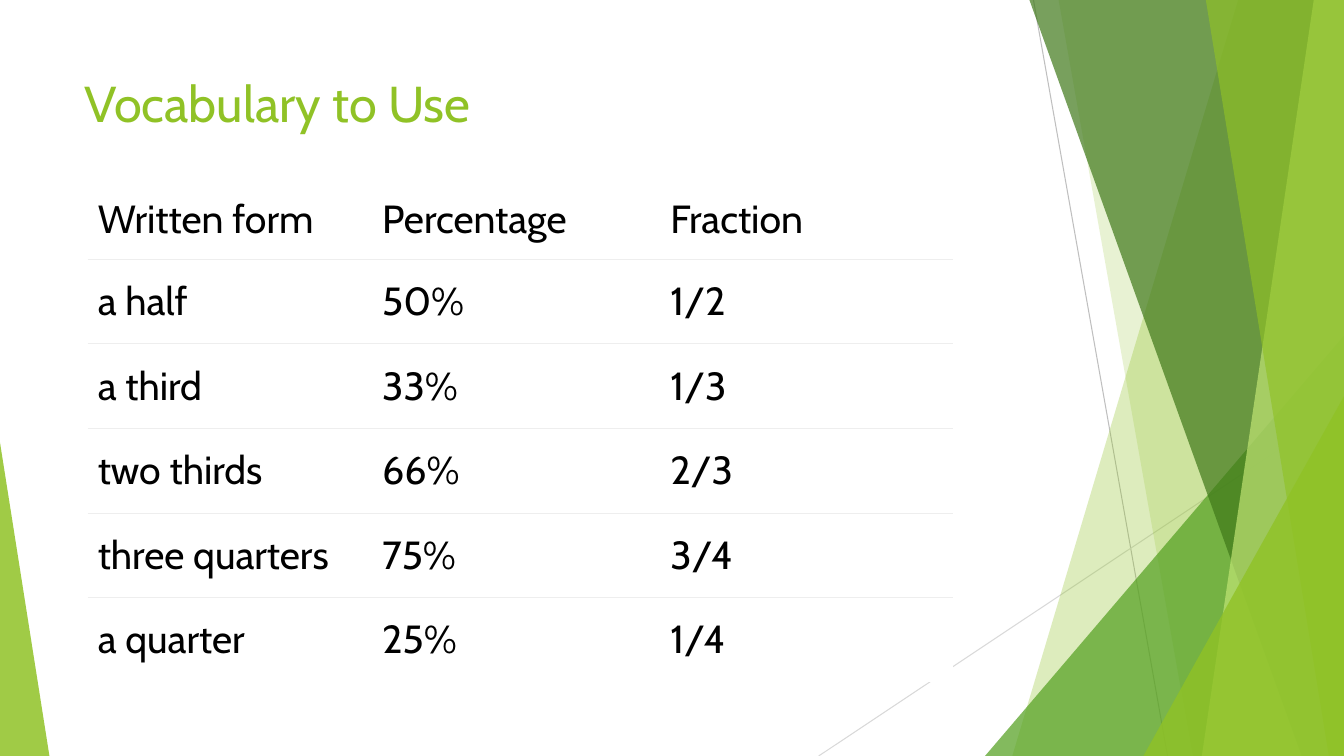
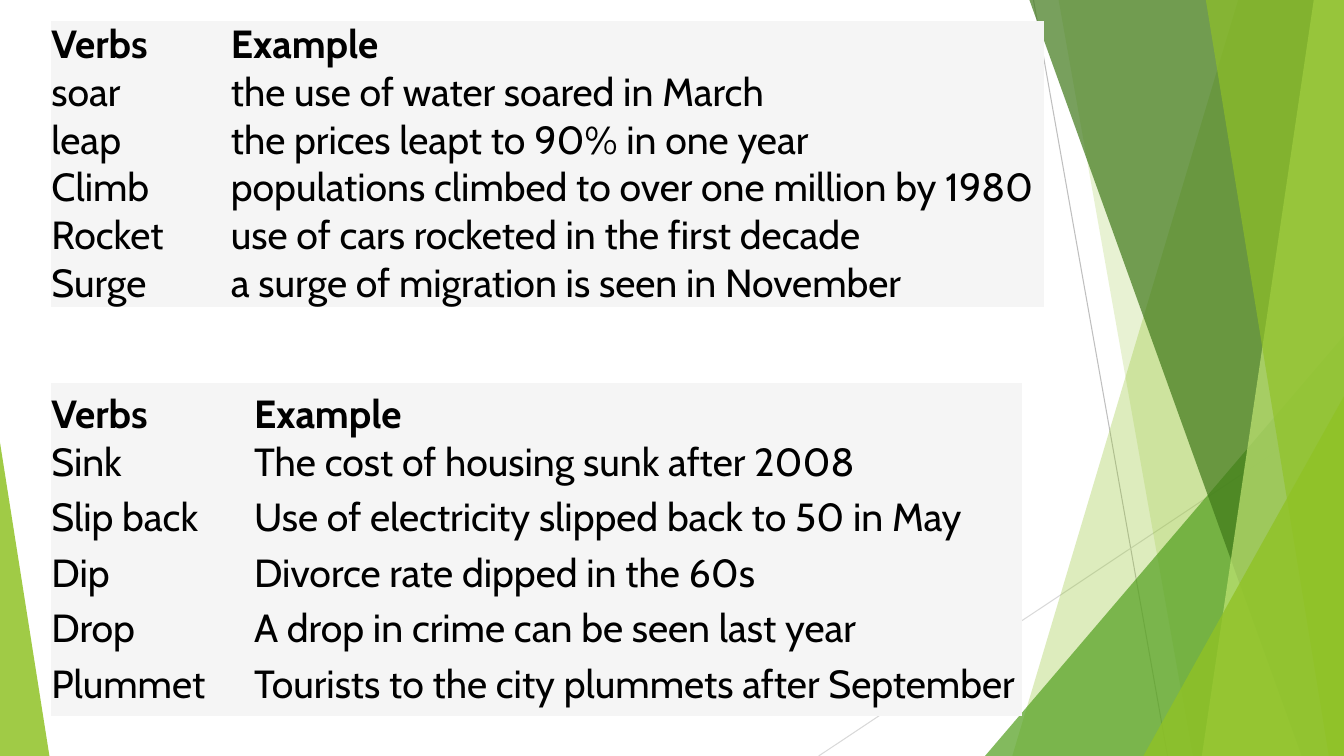
import lxml.etree
import pptx
import pptx.dml.color
import pptx.enum.shapes
import pptx.enum.text
import pptx.oxml.ns
import pptx.util

COLORS = {
    "lime": "90C226", "green": "54A021", "forest": "3F7819", "pale": "C0E474",
    "white": "FFFFFF", "mist": "F5F5F5", "rule": "EEEEEE", "text": "000000",
    "gray": "BFBFBF", "silver": "D9D9D9",
}
FONT = "Cabin"
WIDTH, HEIGHT = 13.33, 7.5
ANCHOR = pptx.enum.text.MSO_ANCHOR

RAYS = [((10.25, 0), (11.58, HEIGHT), "gray"), ((WIDTH, 4.03), (8.12, HEIGHT), "silver")]
FACETS = [
    ("band", 12.28, 10.04, "lime", 30),
    ("band", 10.5, 11.83, "lime", 20),
    ("corner", 3.56, 4.17, "green", 72),
    ("band", 10.21, 12.91, "forest", 70),
    ("band", 13.03, 11.92, "pale", 70),
    ("band", 11.96, 13.18, "lime", 65),
    ("corner", 1.99, 3.57, "lime", 80),
    ("left corner", 0.49, 3.11, "lime", 85),
]

TITLE = "Vocabulary to Use"
VOCABULARY = {
    "rows": [
        ("Written form", "Percentage", "Fraction"),
        ("a half", "50%", "1/2"),
        ("a third", "33%", "1/3"),
        ("two thirds", "66%", "2/3"),
        ("three quarters", "75%", "3/4"),
        ("a quarter", "25%", "1/4"),
    ],
    "at": (0.87, 1.78), "columns": (2.86, 2.86, 2.86), "heights": (0.79, 0.84),
    "fill": "white", "ruled": True, "bold_header": False,
    "anchors": (ANCHOR.MIDDLE, ANCHOR.MIDDLE), "lead": 0.1, "inset": 0.06,
}
VERB_STYLE = {"fill": "mist", "ruled": False, "bold_header": True, "lead": 0, "inset": 0}
RISING = {
    "rows": [
        ("Verbs", "Example"),
        ("soar", "the use of water soared in March"),
        ("leap", "the prices leapt to 90% in one year"),
        ("Climb", "populations climbed to over one million by 1980"),
        ("Rocket", "use of cars rocketed in the first decade"),
        ("Surge", "a surge of migration is seen in November"),
    ],
    "at": (0.51, 0.21), "columns": (1.78, 8.07), "heights": (0.43, 0.43),
    "anchors": (ANCHOR.TOP, ANCHOR.TOP), **VERB_STYLE,
}
FALLING = {
    "rows": [
        ("Verbs", "Example"),
        ("Sink", "The cost of housing sunk after 2008"),
        ("Slip back", "Use of electricity slipped back to 50 in May"),
        ("Dip", "Divorce rate dipped in the 60s"),
        ("Drop", "A drop in crime can be seen last year"),
        ("Plummet", "Tourists to the city plummets after September"),
    ],
    "at": (0.51, 3.8), "columns": (2.01, 7.62), "heights": (0.55, 0.55),
    "anchors": (ANCHOR.BOTTOM, ANCHOR.TOP), **VERB_STYLE,
}


def inches(*lengths):
    return [pptx.util.Inches(length) for length in lengths]


def rgb(name):
    return pptx.dml.color.RGBColor.from_string(COLORS[name])


def child(parent, tag, **attributes):
    return lxml.etree.SubElement(parent, pptx.oxml.ns.qn(tag), attributes)


def apply(target, formats):
    for key, value in formats.items():
        setattr(target, key, value)


def write(frame, text, size, color, bold=False):
    frame.text = text
    font = frame.paragraphs[0].runs[0].font
    apply(font, {"name": FONT, "size": pptx.util.Pt(size), "bold": bold})
    font.color.rgb = rgb(color)


def add_ray(shapes, start, end, color):
    ray = shapes.add_connector(pptx.enum.shapes.MSO_CONNECTOR.STRAIGHT, *inches(*start, *end))
    ray.line.color.rgb = rgb(color)
    ray.line.width = pptx.util.Pt(0.75)
    child(ray.element.spPr, "a:effectLst")
    return ray


def add_facet(shapes, kind, first, second, color, opacity):
    if kind == "band":
        outline = shapes.build_freeform(*inches(first, 0))
        corners = [(WIDTH, 0), (WIDTH, HEIGHT), (second, HEIGHT)]
        outline.add_line_segments([inches(*corner) for corner in corners], close=True)
        facet = outline.convert_to_shape()
    else:
        on_left = kind == "left corner"
        left = 0 if on_left else WIDTH - first
        facet = shapes.add_shape(pptx.enum.shapes.MSO_SHAPE.ISOSCELES_TRIANGLE,
                                 *inches(left, HEIGHT - second, first, second))
        facet.adjustments[0] = 0 if on_left else 1
    facet.shadow.inherit = False
    facet.line.fill.background()
    facet.fill.solid()
    facet.fill.fore_color.rgb = rgb(color)
    tint = next(facet.element.spPr.iter(pptx.oxml.ns.qn("a:srgbClr")))
    child(tint, "a:alpha", val=str(opacity * 1000))
    return facet


def decorate_master(master, slide):
    backdrop = [add_ray(slide.shapes, *ray) for ray in RAYS]
    backdrop += [add_facet(slide.shapes, *facet) for facet in FACETS]
    for position, part in enumerate(backdrop, start=2):
        master.element.cSld.spTree.insert(position, part.element)


def set_borders(cell, ruled_edges):
    properties = cell._tc.get_or_add_tcPr()
    for position, edge in enumerate(("lnL", "lnR", "lnT", "lnB")):
        border = child(properties, "a:" + edge, w=str(pptx.util.Pt(0.75)))
        if edge in ruled_edges:
            child(child(border, "a:solidFill"), "a:srgbClr", val=COLORS["rule"])
        else:
            child(border, "a:noFill")
        properties.insert(position, border)


def add_word_table(slide, words):
    rows, columns = words["rows"], words["columns"]
    header, body = words["heights"]
    heights = [header] + [body] * (len(rows) - 1)
    frame = slide.shapes.add_table(len(rows), len(columns),
                                   *inches(*words["at"], sum(columns), sum(heights)))
    table = frame.table
    apply(table, {"first_row": False, "horz_banding": False})
    style = next(frame.element.iter(pptx.oxml.ns.qn("a:tableStyleId")))
    style.text = "{2D5ABB26-0587-4C30-8999-92F81FD0307C}"
    for column, width in zip(table.columns, inches(*columns)):
        column.width = width
    for row, height in zip(table.rows, inches(*heights)):
        row.height = height
    lead, inset = inches(words["lead"], words["inset"])
    for r, row in enumerate(rows):
        edges = {"lnT"} if r else set()
        if r < len(rows) - 1:
            edges.add("lnB")
        for c, text in enumerate(row):
            cell = table.cell(r, c)
            write(cell.text_frame, text, 28, "text", words["bold_header"] and r == 0)
            apply(cell, {
                "margin_left": inset if c else lead, "margin_right": inset,
                "margin_top": inset, "margin_bottom": inset,
                "vertical_anchor": words["anchors"][min(r, 1)],
            })
            cell.fill.solid()
            cell.fill.fore_color.rgb = rgb(words["fill"])
            set_borders(cell, edges if words["ruled"] else set())


def add_title(slide, text):
    title = slide.shapes.title
    apply(title, dict(zip(("left", "top", "width", "height"), inches(0.74, 0.67, 9.4, 1.44))))
    write(title.text_frame, text, 36, "lime")
    title.text_frame.vertical_anchor = ANCHOR.TOP
    title.text_frame.paragraphs[0].alignment = pptx.enum.text.PP_ALIGN.LEFT


def main():
    deck = pptx.Presentation()
    apply(deck, dict(zip(("slide_width", "slide_height"), inches(WIDTH, HEIGHT))))
    vocabulary = deck.slides.add_slide(deck.slide_layouts[5])
    decorate_master(deck.slide_master, vocabulary)
    add_title(vocabulary, TITLE)
    add_word_table(vocabulary, VOCABULARY)
    verbs = deck.slides.add_slide(deck.slide_layouts[6])
    for words in (RISING, FALLING):
        add_word_table(verbs, words)
    deck.save("out.pptx")


if __name__ == "__main__":
    main()
